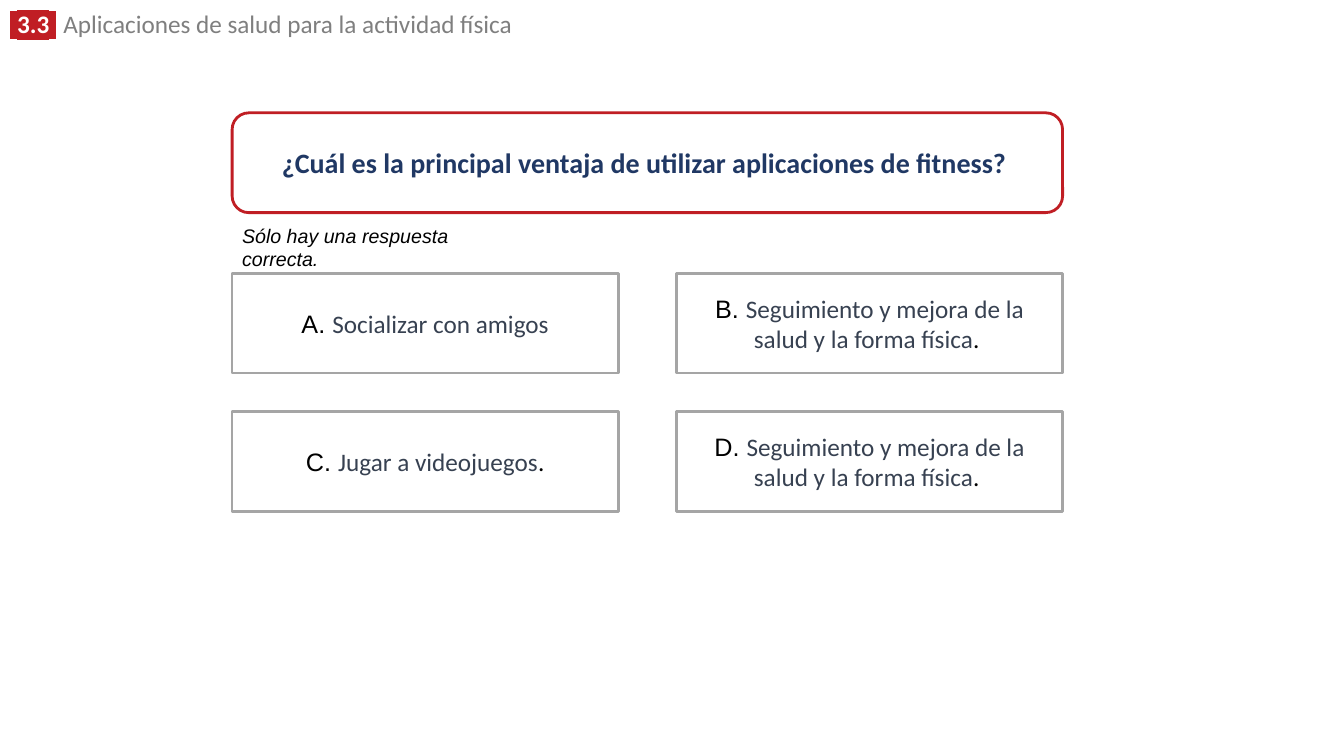
from dataclasses import dataclass

from lxml.etree import SubElement
from pptx import Presentation
from pptx.dml.color import RGBColor
from pptx.enum.shapes import MSO_SHAPE
from pptx.enum.text import MSO_ANCHOR, MSO_AUTO_SIZE, PP_ALIGN
from pptx.oxml.ns import qn
from pptx.util import Pt


@dataclass(frozen=True)
class Theme:
    white: str = "FFFFFF"
    black: str = "000000"
    red: str = "C01E24"
    navy: str = "203864"
    slate: str = "374151"
    gray: str = "7F7F7F"
    border: str = "A5A5A5"
    question_size: int = 20
    text_size: int = 18
    note_size: int = 14
    line_width: int = 2
    heading_font: str = "Calibri"
    body_font: str = "Arial"


THEME = Theme()
ANSWERS = [
    ("A. ", "Socializar con amigos", ""),
    ("B. ", "Seguimiento y mejora de la salud y la forma física", ". "),
    ("C. ", "Jugar a videojuegos", "."),
    ("D. ", "Seguimiento y mejora de la salud y la forma física", ". "),
]


def add_run(p, text, font, size, color, bold=False, italic=False):
    r = p.add_run()
    r.text = text
    r.font.name = font
    r.font.size = Pt(size)
    r.font.bold = bold
    r.font.italic = italic
    r.font.color.rgb = RGBColor.from_string(color)
    return r


def highlight(r, color):
    """Put a marker colour behind a run; the schema wants it right after the fill."""
    rPr = r.font._element
    mark = SubElement(rPr, qn("a:highlight"))
    SubElement(mark, qn("a:srgbClr"), val=color)
    rPr.find(qn("a:solidFill")).addnext(mark)


def add_box(s, shape_type, box, border):
    """Add an outlined white box and return its centred paragraph."""
    sp = s.shapes.add_shape(shape_type, *map(Pt, box))
    sp.shadow.inherit = False
    sp.fill.solid()
    sp.fill.fore_color.rgb = RGBColor.from_string(THEME.white)
    sp.line.color.rgb = RGBColor.from_string(border)
    sp.line.width = Pt(THEME.line_width)
    tf = sp.text_frame
    tf.word_wrap = True
    tf.vertical_anchor = MSO_ANCHOR.MIDDLE
    p = tf.paragraphs[0]
    p.alignment = PP_ALIGN.CENTER
    return p


def place_title(s, box, number, text):
    sp = s.shapes.title
    sp.left, sp.top, sp.width, sp.height = map(Pt, box)
    tf = sp.text_frame
    tf.auto_size = MSO_AUTO_SIZE.NONE
    tf.vertical_anchor = MSO_ANCHOR.TOP
    p = tf.paragraphs[0]
    p.alignment = PP_ALIGN.LEFT
    p.line_spacing = 0.8
    size = THEME.text_size
    for part, font in ((" ", THEME.body_font), (number, THEME.heading_font),
                       (" ", THEME.body_font)):
        r = add_run(p, part, font, size, THEME.white, bold=True)
        highlight(r, THEME.red)
    add_run(p, " ", THEME.body_font, size, THEME.gray)
    add_run(p, text, THEME.heading_font, size, THEME.gray)


def add_question(s, box, text):
    p = add_box(s, MSO_SHAPE.ROUNDED_RECTANGLE, box, THEME.red)
    add_run(p, text, THEME.heading_font, THEME.question_size, THEME.navy, bold=True)


def add_note(s, box, text):
    tf = s.shapes.add_textbox(*map(Pt, box)).text_frame
    tf.word_wrap = True
    add_run(tf.paragraphs[0], text, THEME.body_font, THEME.note_size,
            THEME.black, italic=True)


def add_answers(s, box, answers, columns=2, gap_x=41.6, gap_y=27.4):
    """Lay the answers out row by row in equal cells that fill the box."""
    left, top, width, height = box
    rows = -(-len(answers) // columns)
    w = (width - gap_x * (columns - 1)) / columns
    h = (height - gap_y * (rows - 1)) / rows
    for i, (letter, text, ending) in enumerate(answers):
        row, column = divmod(i, columns)
        cell = (left + column * (w + gap_x), top + row * (h + gap_y), w, h)
        p = add_box(s, MSO_SHAPE.RECTANGLE, cell, THEME.border)
        add_run(p, letter, THEME.body_font, THEME.text_size, THEME.black)
        add_run(p, text, THEME.heading_font, THEME.text_size, THEME.slate)
        if ending:
            add_run(p, ending, THEME.heading_font, THEME.text_size, THEME.black)


def add_quiz_slide(prs):
    s = prs.slides.add_slide(prs.slide_layouts[5])
    left, width = 165.8, 593.2
    place_title(s, (0, 6.5, 685.4, 24.5), "3.3",
                "Aplicaciones de salud para la actividad física")
    add_question(s, (left, 80.6, width, 71.3),
                 "¿Cuál es la principal ventaja de utilizar aplicaciones de fitness? ")
    add_answers(s, (left, 195.1, width, 170), ANSWERS)
    add_note(s, (left, 156.2, 170, 24.5), "Sólo hay una respuesta correcta.")


def main():
    prs = Presentation()
    prs.slide_width, prs.slide_height = Pt(960), Pt(540)
    add_quiz_slide(prs)
    prs.save("out.pptx")


if __name__ == "__main__":
    main()
